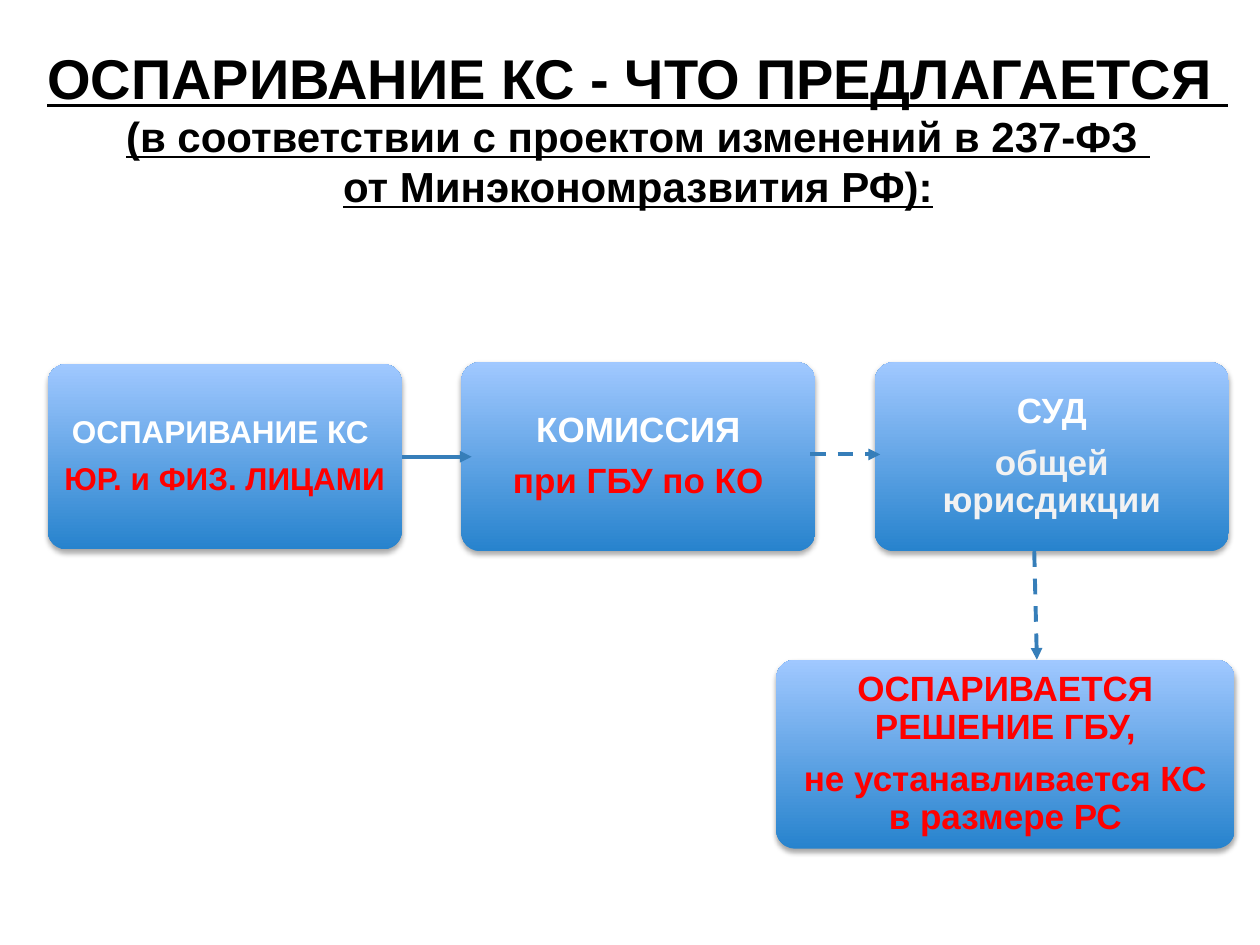
from lxml import etree
from pptx import Presentation
from pptx.dml.color import RGBColor
from pptx.enum.dml import MSO_LINE
from pptx.enum.shapes import MSO_CONNECTOR, MSO_SHAPE
from pptx.enum.text import MSO_ANCHOR, PP_ALIGN
from pptx.oxml.ns import qn
from pptx.util import Pt

ROUNDED = MSO_SHAPE.ROUNDED_RECTANGLE
STRAIGHT = MSO_CONNECTOR.STRAIGHT
DASH = MSO_LINE.DASH
CENTER = PP_ALIGN.CENTER
TOP, MIDDLE = MSO_ANCHOR.TOP, MSO_ANCHOR.MIDDLE
TITLE_ONLY = 5
RIGHT_SIDE = 3
FONT = "Arial"
COLORS = {
    "black": "000000",
    "white": "FFFFFF",
    "pale": "F2F2F2",
    "red": "FF0000",
    "arrow": "367EB9",
    "box_bottom": "2783CD",
    "box_top": "A0C8FF",
}


def rgb(name):
    return RGBColor.from_string(COLORS[name])


def add_span(para, text, size, color, underline=False):
    span = para.add_run()
    span.text = text
    span.font.name = FONT
    span.font.size = Pt(size)
    span.font.bold = True
    span.font.underline = underline
    span.font.color.rgb = rgb(color)


def get_paragraph(frame, index):
    para = frame.paragraphs[0] if index == 0 else frame.add_paragraph()
    para.alignment = CENTER
    return para


def place_title(page, left, top, width, height, lines):
    title = page.shapes.title
    title.left, title.top = Pt(left), Pt(top)
    title.width, title.height = Pt(width), Pt(height)
    frame = title.text_frame
    frame.word_wrap = True
    frame.vertical_anchor = TOP
    for index, (text, size) in enumerate(lines):
        add_span(get_paragraph(frame, index), text, size, "black", underline=True)


def add_soft_shadow(box):
    effects = box._element.spPr.find(qn("a:effectLst"))
    shadow = etree.SubElement(effects, qn("a:outerShdw"), blurRad=str(Pt(3.1)),
                              dist=str(Pt(1.8)), dir="5400000", rotWithShape="0")
    color = etree.SubElement(shadow, qn("a:srgbClr"), val=COLORS["black"])
    etree.SubElement(color, qn("a:alpha"), val="35000")


def add_step(page, left, top, width, height, size, lines):
    box = page.shapes.add_shape(ROUNDED, Pt(left), Pt(top), Pt(width), Pt(height))
    box.adjustments[0] = 0.1
    box.line.fill.background()
    box.shadow.inherit = False
    add_soft_shadow(box)

    box.fill.gradient()
    box.fill.gradient_angle = 90
    for stop, color in zip(box.fill.gradient_stops, ("box_bottom", "box_top")):
        stop.color.rgb = rgb(color)

    frame = box.text_frame
    frame.word_wrap = True
    frame.vertical_anchor = MIDDLE
    inset = Pt(size * 0.28)
    frame.margin_left = frame.margin_right = inset
    frame.margin_top = frame.margin_bottom = inset
    for index, (text, color) in enumerate(lines):
        para = get_paragraph(frame, index)
        para.line_spacing = 0.9
        para.space_after = Pt(size * 0.4)
        add_span(para, text, size, color)
    return box


def add_arrow(page, start, end, dashed=True):
    arrow = page.shapes.add_connector(STRAIGHT, *map(Pt, start + end))
    arrow.line.color.rgb = rgb("arrow")
    arrow.line.width = Pt(2.25)
    if dashed:
        arrow.line.dash_style = DASH
    etree.SubElement(arrow.line._get_or_add_ln(), qn("a:tailEnd"), type="triangle")
    etree.SubElement(arrow._element.spPr, qn("a:effectLst"))
    return arrow


def place_flow(page, left, top, width, height):
    # Row of three steps at an equal pitch
    step_width, step_height = 202.3, 108
    pitch = (width - step_width) / 2
    appeal = add_step(page, left, top + 1, step_width, 106, 18, [
        ("ОСПАРИВАНИЕ КС ", "white"), ("ЮР. и ФИЗ. ЛИЦАМИ", "red")])
    add_step(page, left + pitch, top, step_width, step_height, 20, [
        ("КОМИССИЯ", "white"), ("при ГБУ по КО", "red")])
    add_step(page, left + 2 * pitch, top, step_width, step_height, 20, [
        ("СУД", "white"), ("общей юрисдикции", "pale")])

    # Outcome below the court
    outcome_top = top + height - step_height
    add_step(page, 443.5, outcome_top, 262, step_height, 20, [
        ("ОСПАРИВАЕТСЯ РЕШЕНИЕ ГБУ,", "red"),
        ("не устанавливается КС в размере РС", "red")])

    # Arrows between the steps
    middle = top + step_height / 2
    first = add_arrow(page, (left + step_width, middle), (269.5, middle), dashed=False)
    first.begin_connect(appeal, RIGHT_SIDE)
    add_arrow(page, (463, middle - 1.3), (503, middle - 1.3))
    add_arrow(page, (591, top + step_height), (592.5, outcome_top))


def main():
    deck = Presentation()
    deck.slide_width, deck.slide_height = Pt(720), Pt(540)
    page = deck.slides.add_slide(deck.slide_layouts[TITLE_ONLY])
    place_title(page, 9, 21, 711, 104.5, [
        ("ОСПАРИВАНИЕ КС - ЧТО ПРЕДЛАГАЕТСЯ ", 32),
        ("(в соответствии с проектом изменений в 237-ФЗ ", 24),
        ("от Минэкономразвития РФ):", 24)])
    place_flow(page, 27.3, 207, 674.9, 278)
    deck.save("out.pptx")


if __name__ == "__main__":
    main()
